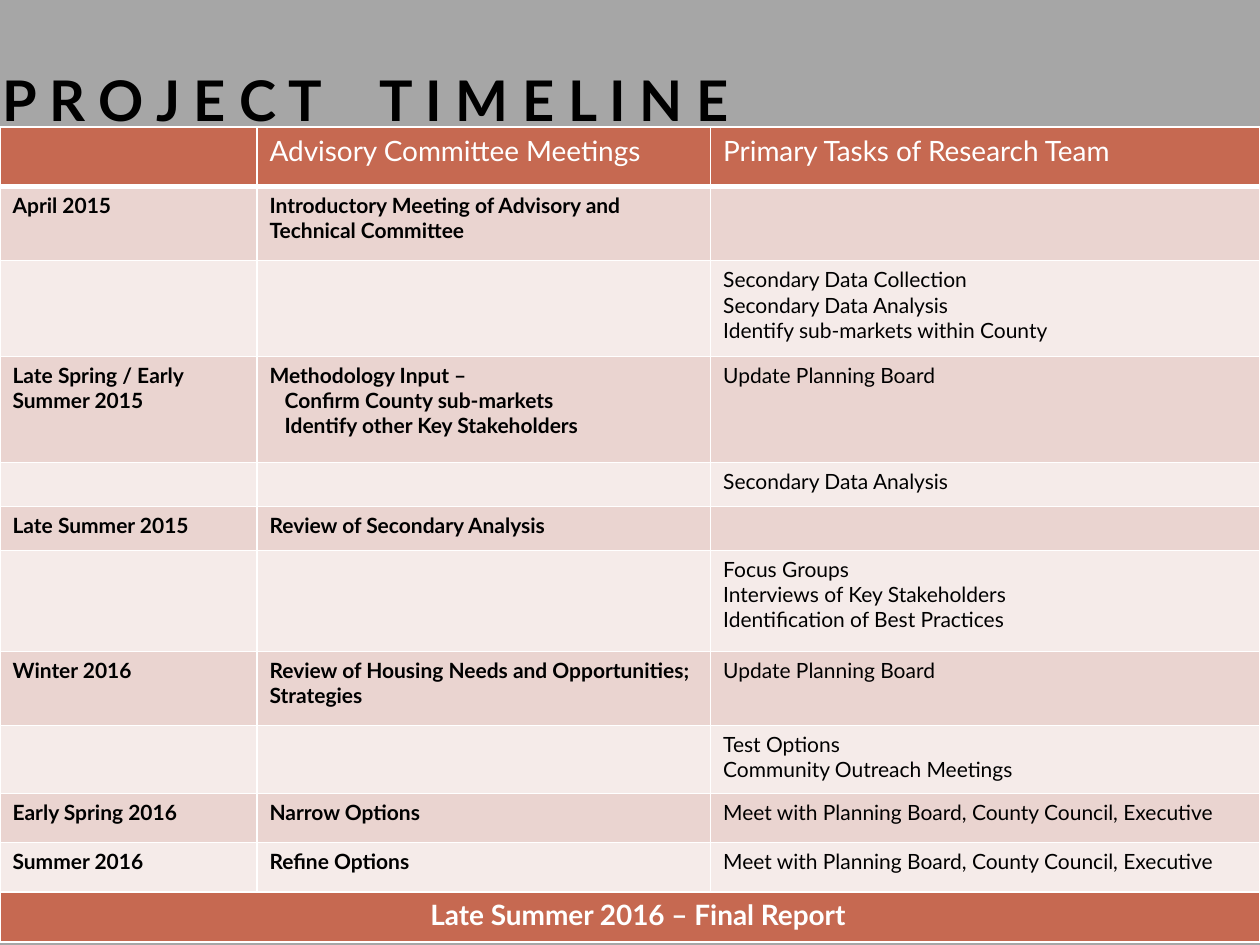
"""Build the project timeline slide."""
from dataclasses import dataclass

from pptx import Presentation
from pptx.dml.color import RGBColor
from pptx.enum.shapes import MSO_SHAPE as Shape
from pptx.enum.text import MSO_ANCHOR as Anchor, PP_ALIGN as Align
from pptx.oxml.ns import qn
from pptx.util import Inches, Pt
from lxml.etree import SubElement

FONT = "Lato"
GRAY = RGBColor(0xA6, 0xA6, 0xA6)
RUST = RGBColor(0xC6, 0x69, 0x51)
ROSE = RGBColor(0xEA, 0xD4, 0xD0)
PALE = RGBColor(0xF5, 0xEB, 0xE9)
BLACK = RGBColor(0, 0, 0)
WHITE = RGBColor(0xFF, 0xFF, 0xFF)
COLUMN_WIDTHS = (2.04, 3.6, 4.36)
SUB_ITEM_INDENT = 0.12
BOARD_MEETING = "Meet with Planning Board, County Council, Executive"


@dataclass(frozen=True)
class Period:
    height: float
    date: str = ""
    meeting: tuple[str, ...] = ()
    tasks: tuple[str, ...] = ()


PERIODS = (
    Period(0.59, "April 2015", ("Introductory Meeting of Advisory and Technical Committee",)),
    Period(0.76, tasks=("Secondary Data Collection", "Secondary Data Analysis",
                        "Identify sub-markets within County")),
    Period(0.84, "Late Spring / Early Summer 2015",
           ("Methodology Input –", "Confirm County sub-markets",
            "Identify other Key Stakeholders"),
           ("Update Planning Board",)),
    Period(0.35, tasks=("Secondary Data Analysis",)),
    Period(0.35, "Late Summer 2015", ("Review of Secondary Analysis",)),
    Period(0.8, tasks=("Focus Groups", "Interviews of Key Stakeholders",
                       "Identification of Best Practices")),
    Period(0.59, "Winter 2016", ("Review of Housing Needs and Opportunities; Strategies",),
           ("Update Planning Board",)),
    Period(0.54, tasks=("Test Options", "Community Outreach Meetings")),
    Period(0.39, "Early Spring 2016", ("Narrow Options",), (BOARD_MEETING,)),
    Period(0.39, "Summer 2016", ("Refine Options",), (BOARD_MEETING,)),
)
HEIGHTS = (0.47, *(period.height for period in PERIODS), 0.4)


def add_run(paragraph, text: str, size: float, color: RGBColor, bold: bool):
    """Append a formatted run and return it."""
    run = paragraph.add_run()
    run.text = text
    run.font.name = FONT
    run.font.size = Pt(size)
    run.font.bold = bold
    run.font.color.rgb = color
    return run


def indent(paragraph, inches: float) -> None:
    """Set the left margin of a paragraph."""
    paragraph._p.get_or_add_pPr().set("marL", str(Inches(inches)))


def add_borders(cell, bottom: float, top: float) -> None:
    """Give the cell white borders."""
    properties = cell._tc.get_or_add_tcPr()
    for side, width in (("L", 1), ("R", 1), ("T", top), ("B", bottom)):
        line = SubElement(properties, qn(f"a:ln{side}"), w=str(Pt(width)))
        fill = SubElement(line, qn("a:solidFill"))
        SubElement(fill, qn("a:srgbClr"), val=str(WHITE))


def fill_cell(cell, lines: tuple[str, ...], size: float, color: RGBColor,
              bold: bool, fill: RGBColor, bottom: float = 1, top: float = 1) -> None:
    """Write the lines, one a paragraph, and colour the cell."""
    add_borders(cell, bottom, top)
    cell.fill.solid()
    cell.fill.fore_color.rgb = fill
    frame = cell.text_frame
    for index, text in enumerate(lines):
        paragraph = frame.add_paragraph() if index else frame.paragraphs[0]
        add_run(paragraph, text, size, color, bold)
        if bold and index:
            indent(paragraph, SUB_ITEM_INDENT)
    if not lines:
        SubElement(frame.paragraphs[0]._p, qn("a:endParaRPr"), sz=str(int(size * 100)))


def add_backdrop(slide) -> None:
    """Cover the slide with gray."""
    shape = slide.shapes.add_shape(Shape.RECTANGLE, 0, 0, Inches(10), Inches(7.5))
    shape.shadow.inherit = False
    shape.fill.solid()
    shape.fill.fore_color.rgb = GRAY
    shape.line.fill.background()


def add_timeline(slide) -> None:
    """Add the table of periods, meetings and tasks."""
    table = slide.shapes.add_table(len(HEIGHTS), len(COLUMN_WIDTHS), 0, Inches(1.01),
                                   Inches(10), Inches(sum(HEIGHTS))).table
    for column, width in zip(table.columns, COLUMN_WIDTHS):
        column.width = Inches(width)
    for row, height in zip(table.rows, HEIGHTS):
        row.height = Inches(height)

    headings = ((), ("Advisory Committee Meetings",), ("Primary Tasks of Research Team",))
    for column, lines in enumerate(headings):
        fill_cell(table.cell(0, column), lines, 16, WHITE, False, RUST, bottom=3)
    for row, period in enumerate(PERIODS, start=1):
        dates = (period.date,) if period.date else ()
        for column, lines in enumerate((dates, period.meeting, period.tasks)):
            fill_cell(table.cell(row, column), lines, 12, BLACK, column < 2,
                      ROSE if row % 2 else PALE, top=3 if row == 1 else 1)

    last = len(HEIGHTS) - 1
    report = table.cell(last, 0)
    report.merge(table.cell(last, 2))
    fill_cell(report, ("Late Summer 2016 – Final Report",), 16, WHITE, True, RUST)
    paragraph = report.text_frame.paragraphs[0]
    paragraph.alignment = Align.CENTER
    indent(paragraph, 0.13)


def place_title(slide) -> None:
    """Format the title and bring it to the front."""
    title = slide.shapes.title
    title.left, title.top = Inches(-0.08), Inches(0.47)
    title.width, title.height = Inches(6.89), Inches(0.64)
    frame = title.text_frame
    frame.word_wrap = True
    frame.vertical_anchor = Anchor.TOP
    paragraph = frame.paragraphs[0]
    paragraph.alignment = Align.LEFT
    add_run(paragraph, "P R O J E C T", 32, BLACK, True)
    gap = add_run(paragraph, " ", 32, BLACK, True)
    gap.font._element.set("spc", "2500")
    add_run(paragraph, "T I M E L I N E", 32, BLACK, True)
    slide.shapes._spTree.append(title._element)


def main() -> None:
    """Create the presentation and save it."""
    presentation = Presentation()
    presentation.slide_width = Inches(10)
    presentation.slide_height = Inches(7.5)
    slide = presentation.slides.add_slide(presentation.slide_layouts[5])
    add_backdrop(slide)
    add_timeline(slide)
    place_title(slide)
    presentation.save("out.pptx")


if __name__ == "__main__":
    main()
